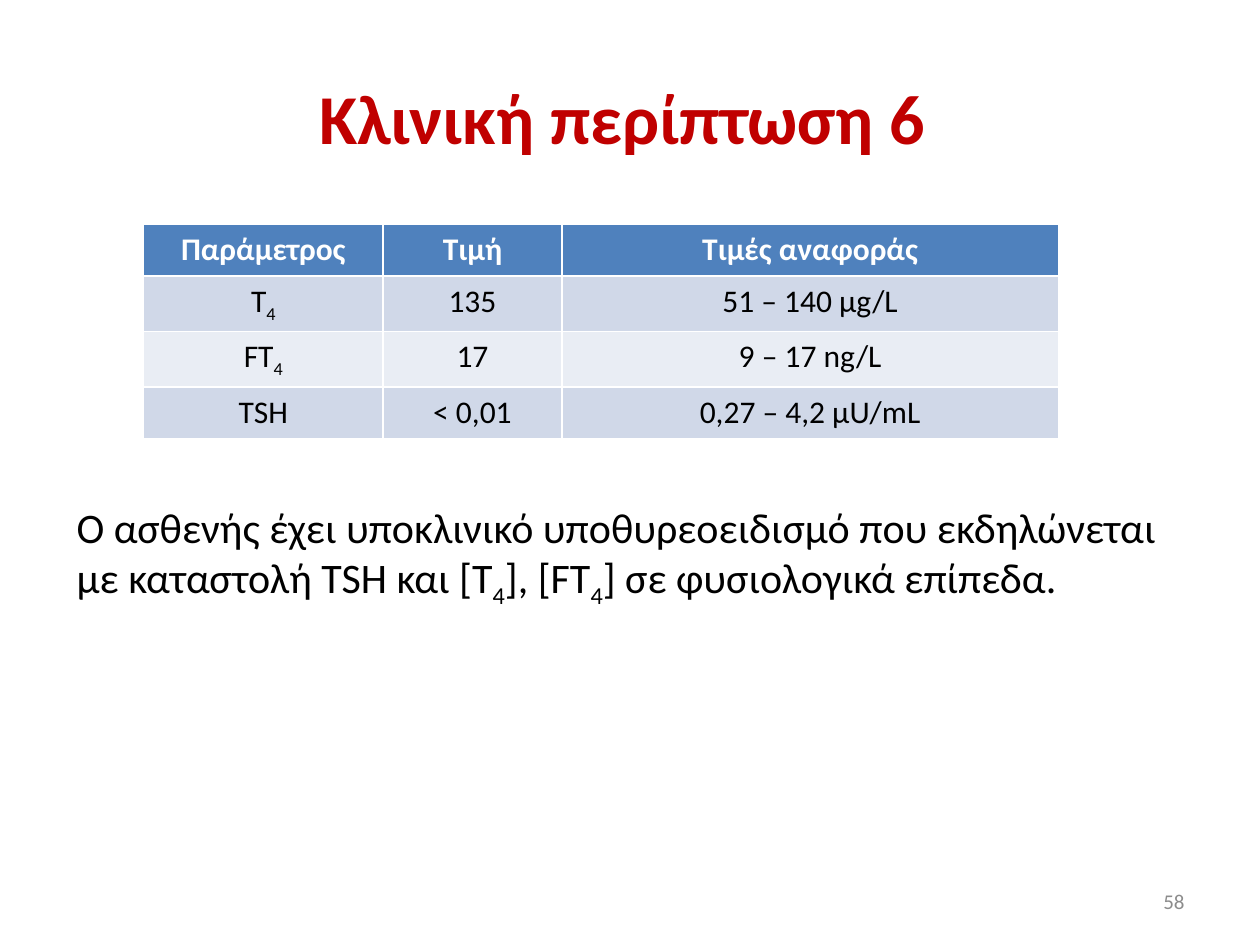
from pptx import Presentation
from pptx.dml.color import RGBColor
from pptx.enum.text import MSO_ANCHOR, PP_ALIGN
from pptx.util import Inches, Pt

LEFT, CENTER, RIGHT = PP_ALIGN.LEFT, PP_ALIGN.CENTER, PP_ALIGN.RIGHT
TOP, MIDDLE = MSO_ANCHOR.TOP, MSO_ANCHOR.MIDDLE

FONT = "Calibri"
COLORS = {
    "title": "C00000",
    "text": "000000",
    "number": "8C8C8C",
    "header_text": "FFFFFF",
    "header": "4F81BD",
    "odd_row": "D0D8E8",
    "even_row": "E9EDF4",
}
COLUMN_WIDTHS = [1.9, 1.42, 3.94]
ROW_HEIGHT = 0.41
RESULTS = [
    ["Παράμετρος", "Τιμή", "Τιμές αναφοράς"],
    ["Τ|4", "135", "51 – 140 μg/L"],
    ["FT|4", "17", "9 – 17 ng/L"],
    ["ΤSH", "< 0,01", "0,27 – 4,2 μU/mL"],
]
CONCLUSION = (
    "Ο ασθενής έχει υποκλινικό υποθυρεοειδισμό που εκδηλώνεται "
    "με καταστολή TSH και [T|4|], [FT|4|] σε φυσιολογικά επίπεδα."
)


def write_text(frame, text, size, color, align, bold=False):
    """Fill the frame with one paragraph; every second part between bars is a subscript."""
    paragraph = frame.paragraphs[0]
    paragraph.alignment = align
    for index, part in enumerate(text.split("|")):
        run = paragraph.add_run()
        run.text = part
        run.font.name = FONT
        run.font.size = Pt(size)
        run.font.bold = bold
        run.font.color.rgb = RGBColor.from_string(COLORS[color])
        if index % 2:
            run.font._element.set("baseline", "-25000")


def add_text(slide, box, text, size, color, align, anchor, bold=False):
    """Add a wrapping text box at left, top, width, height in inches."""
    frame = slide.shapes.add_textbox(*map(Inches, box)).text_frame
    frame.word_wrap = True
    frame.vertical_anchor = anchor
    write_text(frame, text, size, color, align, bold)


def add_results_table(slide, left, top):
    """Add the laboratory results with a header and alternating row fills."""
    table = slide.shapes.add_table(
        len(RESULTS), len(COLUMN_WIDTHS), Inches(left), Inches(top),
        Inches(sum(COLUMN_WIDTHS)), Inches(ROW_HEIGHT * len(RESULTS)),
    ).table
    for column, width in zip(table.columns, COLUMN_WIDTHS):
        column.width = Inches(width)
    for row_index, values in enumerate(RESULTS):
        is_header = row_index == 0
        fill = "header" if is_header else "odd_row" if row_index % 2 else "even_row"
        color = "header_text" if is_header else "text"
        for column_index, value in enumerate(values):
            cell = table.cell(row_index, column_index)
            cell.fill.solid()
            cell.fill.fore_color.rgb = RGBColor.from_string(COLORS[fill])
            write_text(cell.text_frame, value, 18, color, CENTER, is_header)


def main():
    """Build and save the clinical case slide."""
    presentation = Presentation()
    presentation.slide_width = Inches(10)
    presentation.slide_height = Inches(7.5)
    slide = presentation.slides.add_slide(presentation.slide_layouts[6])
    add_text(slide, (0.5, 0.3, 9, 1.25), "Κλινική περίπτωση 6 ", 40, "title", CENTER, MIDDLE, True)
    add_results_table(slide, 1.14, 1.78)
    add_text(slide, (7.17, 6.95, 2.33, 0.4), "58", 12, "number", RIGHT, MIDDLE)
    add_text(slide, (0.51, 3.93, 8.98, 0.91), CONCLUSION, 24, "text", LEFT, TOP)
    presentation.save("out.pptx")


if __name__ == "__main__":
    main()
